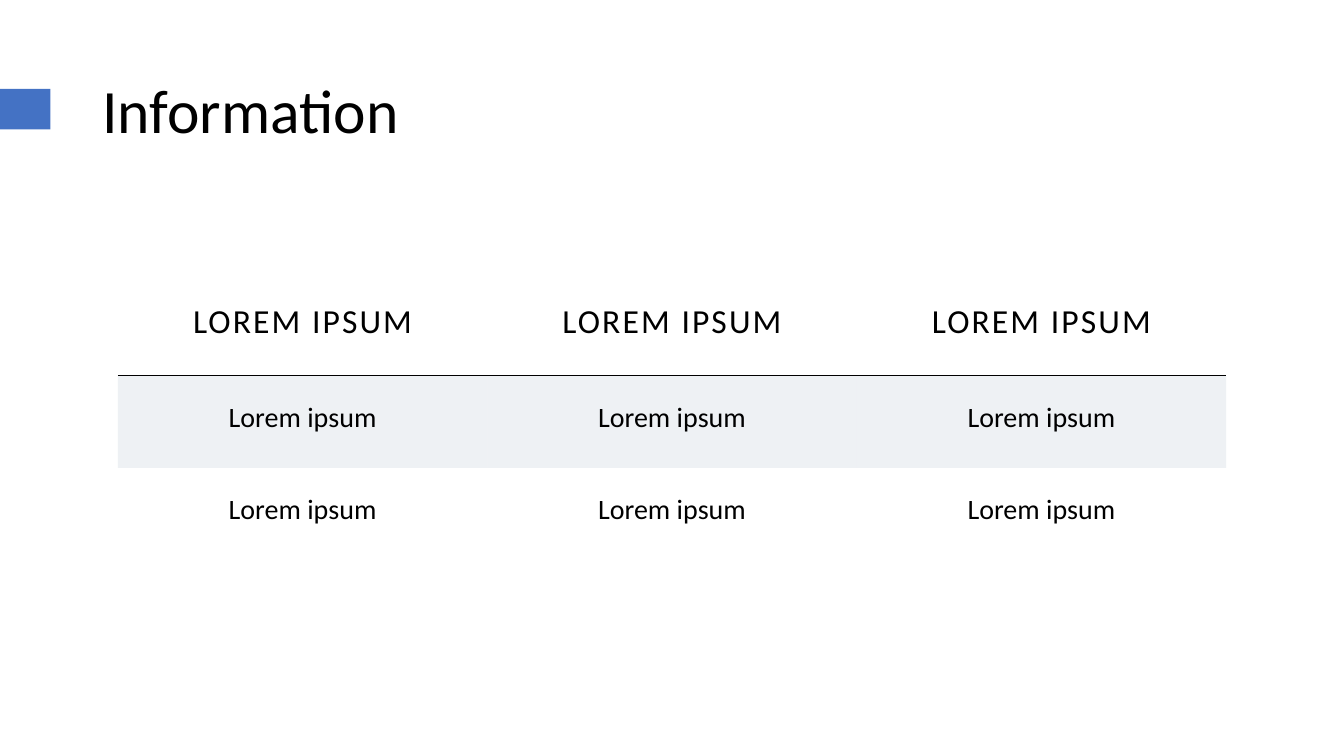
from dataclasses import dataclass

import lxml.etree
import pptx
import pptx.dml.color
import pptx.enum.shapes
import pptx.enum.text
import pptx.oxml
import pptx.oxml.ns
import pptx.util

Cm = pptx.util.Cm
COLORS = {"text": "000000", "accent": "4472C4", "band": "ADB9CA"}
FONT = "Calibri"
NO_TABLE_STYLE = "{2D5ABB26-0587-4C30-8999-92F81FD0307C}"
CELL_MARGIN = Cm(0.64)
COLUMN_WIDTH = Cm(9.31)


@dataclass(frozen=True)
class TableRow:
    label: str
    height: float
    size: int
    spacing: float = 0
    banded: bool = False
    ruled: bool = False


ROWS = [
    TableRow("LOREM IPSUM", 2.51, 24, spacing=1.5, ruled=True),
    TableRow("Lorem ipsum", 2.32, 20, banded=True),
    TableRow("Lorem ipsum", 2.32, 20),
]
COLUMN_COUNT = 3


def rgb(name: str) -> pptx.dml.color.RGBColor:
    return pptx.dml.color.RGBColor.from_string(COLORS[name])


def set_attributes(target: object, values: dict) -> None:
    for name, value in values.items():
        setattr(target, name, value)


def write_text(paragraph, text: str, size: int):
    """Fill a paragraph with one formatted run and return the run."""
    run = paragraph.add_run()
    run.text = text
    set_attributes(run.font, {"name": FONT, "size": pptx.util.Pt(size), "bold": False})
    run.font.color.rgb = rgb("text")
    return run


def add_accent(slide) -> None:
    shape = slide.shapes.add_shape(
        pptx.enum.shapes.MSO_SHAPE.RECTANGLE, Cm(0), Cm(2.24), Cm(1.27), Cm(1.02)
    )
    shape.shadow.inherit = False
    shape.fill.solid()
    shape.fill.fore_color.rgb = rgb("accent")
    shape.line.fill.background()


def add_title(slide, text: str) -> None:
    box = slide.shapes.add_textbox(Cm(2.33), Cm(1.02), Cm(29.21), Cm(3.68))
    set_attributes(box.text_frame, {
        "word_wrap": True,
        "vertical_anchor": pptx.enum.text.MSO_ANCHOR.MIDDLE,
    })
    paragraph = box.text_frame.paragraphs[0]
    paragraph.line_spacing = 0.9
    write_text(paragraph, text, 44)


def add_bottom_rule(cell) -> None:
    properties = cell._tc.get_or_add_tcPr()
    properties.insert(0, pptx.oxml.parse_xml(
        f'<a:lnB {pptx.oxml.ns.nsdecls("a")} w="12700"><a:solidFill>'
        f'<a:srgbClr val="{COLORS["text"]}"/></a:solidFill></a:lnB>'
    ))


def fill_band(cell) -> None:
    """Give the cell a band colour at 20 % opacity."""
    cell.fill.solid()
    cell.fill.fore_color.rgb = rgb("band")
    color = cell._tc.tcPr.find(".//" + pptx.oxml.ns.qn("a:srgbClr"))
    lxml.etree.SubElement(color, pptx.oxml.ns.qn("a:alpha"), val="20000")


def format_cell(cell, row: TableRow) -> None:
    sides = ("left", "right", "top", "bottom")
    set_attributes(cell, {f"margin_{side}": CELL_MARGIN for side in sides})
    paragraph = cell.text_frame.paragraphs[0]
    paragraph.alignment = pptx.enum.text.PP_ALIGN.CENTER
    run = write_text(paragraph, row.label, row.size)
    run.font._element.set("spc", str(int(row.spacing * 100)))
    if row.banded:
        fill_band(cell)
    else:
        cell.fill.background()
    if row.ruled:
        add_bottom_rule(cell)


def add_information_table(slide) -> None:
    height = Cm(sum(row.height for row in ROWS))
    frame = slide.shapes.add_table(
        len(ROWS), COLUMN_COUNT, Cm(2.97), Cm(6.96), COLUMN_WIDTH * COLUMN_COUNT, height
    )
    table = frame.table
    set_attributes(table, {"first_row": False, "horz_banding": False})
    table._tbl.tblPr.find(pptx.oxml.ns.qn("a:tableStyleId")).text = NO_TABLE_STYLE
    for column in table.columns:
        column.width = COLUMN_WIDTH
    for table_row, row in zip(table.rows, ROWS):
        table_row.height = Cm(row.height)
        for cell in table_row.cells:
            format_cell(cell, row)


def main() -> None:
    presentation = pptx.Presentation()
    set_attributes(presentation, {"slide_width": Cm(33.87), "slide_height": Cm(19.05)})
    slide = presentation.slides.add_slide(presentation.slide_layouts[6])
    add_accent(slide)
    add_title(slide, "Information")
    add_information_table(slide)
    presentation.save("out.pptx")


if __name__ == "__main__":
    main()
